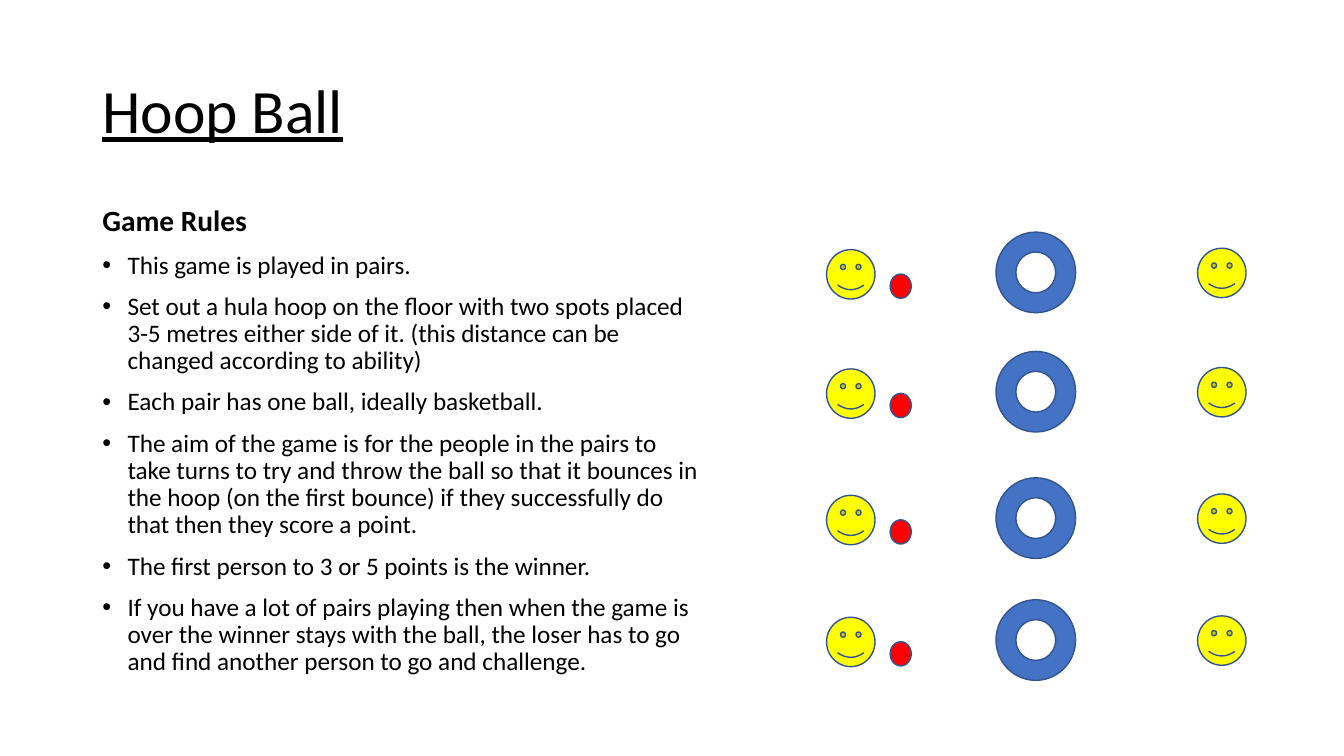
from pptx import Presentation
from pptx.dml.color import RGBColor
from pptx.enum.shapes import MSO_SHAPE
from pptx.enum.text import MSO_ANCHOR
from pptx.util import Pt
from lxml import etree

DONUT, FACE, OVAL = MSO_SHAPE.DONUT, MSO_SHAPE.SMILEY_FACE, MSO_SHAPE.OVAL
TOP, MIDDLE = MSO_ANCHOR.TOP, MSO_ANCHOR.MIDDLE

BLACK = RGBColor(0x00, 0x00, 0x00)
BLUE = RGBColor(0x44, 0x72, 0xC4)
OUTLINE = RGBColor(0x32, 0x54, 0x91)
YELLOW = RGBColor(0xFF, 0xFF, 0x00)
RED = RGBColor(0xFF, 0x00, 0x00)

RULES = [
    "This game is played in pairs.",
    "Set out a hula hoop on the floor with two spots placed 3-5 metres either "
    "side of it. (this distance can be changed according to ability)",
    "Each pair has one ball, ideally basketball.",
    "The aim of the game is for the people in the pairs to take turns to try and "
    "throw the ball so that it bounces in the hoop (on the first bounce) if they "
    "successfully do that then they score a point.",
    "The first person to 3 or 5 points is the winner.",
    "If you have a lot of pairs playing then when the game is over the winner "
    "stays with the ball, the loser has to go and find another person to go and "
    "challenge.",
]

# Each pair: shape, fill, left, offset from the row top, width, height
PAIR = [
    (DONUT, BLUE, 711.4, 0, 56.9, 57.6),
    (FACE, YELLOW, 590.4, 12.5, 34.6, 35.3),
    (FACE, YELLOW, 855.4, 11.5, 34.6, 35.3),
    (OVAL, RED, 635.8, 30, 15.1, 17.3),
]
ROW_TOPS = [165.8, 251, 341.3, 428.4]


class GameSlide:
    font = "Calibri"

    def __init__(self, prs):
        self.s = prs.slides.add_slide(prs.slide_layouts[6])

    def box(self, x, y, w, h, anchor):
        tf = self.s.shapes.add_textbox(Pt(x), Pt(y), Pt(w), Pt(h)).text_frame
        tf.word_wrap = True
        tf.vertical_anchor = anchor
        return tf

    def paragraph(self, p, text, size, bold=False, underline=False, before=0):
        p.text = text
        p.line_spacing = 0.9
        p.space_before = Pt(before)
        font = p.runs[0].font
        font.name, font.size = self.font, Pt(size)
        font.bold, font.underline = bold, underline
        font.color.rgb = BLACK

    def bullet(self, p):
        pPr = p._p.get_or_add_pPr()
        pPr.set("marL", str(Pt(18)))
        pPr.set("indent", str(-Pt(18)))
        ns = "{http://schemas.openxmlformats.org/drawingml/2006/main}"
        etree.SubElement(pPr, ns + "buFont", typeface="Arial")
        etree.SubElement(pPr, ns + "buChar", char="•")

    def pair(self, top):
        group = self.s.shapes.add_group_shape()
        for kind, color, x, dy, w, h in PAIR:
            sp = group.shapes.add_shape(kind, Pt(x), Pt(top + dy), Pt(w), Pt(h))
            sp.shadow.inherit = False
            sp.fill.solid()
            sp.fill.fore_color.rgb = color
            sp.line.color.rgb = OUTLINE
            sp.line.width = Pt(1)


def main():
    prs = Presentation()
    prs.slide_width, prs.slide_height = Pt(960), Pt(540)
    slide = GameSlide(prs)

    # Title
    tf = slide.box(66, 28.8, 828, 104.4, MIDDLE)
    slide.paragraph(tf.paragraphs[0], "Hoop Ball", 44, underline=True)

    # Rules
    tf = slide.box(66, 144, 445, 342.7, TOP)
    slide.paragraph(tf.paragraphs[0], "Game Rules", 21, bold=True, before=10)
    for rule in RULES:
        p = tf.add_paragraph()
        slide.paragraph(p, rule, 18, before=10)
        slide.bullet(p)

    # Four pairs of players with hoop and ball
    for top in ROW_TOPS:
        slide.pair(top)

    prs.save("out.pptx")


if __name__ == "__main__":
    main()
